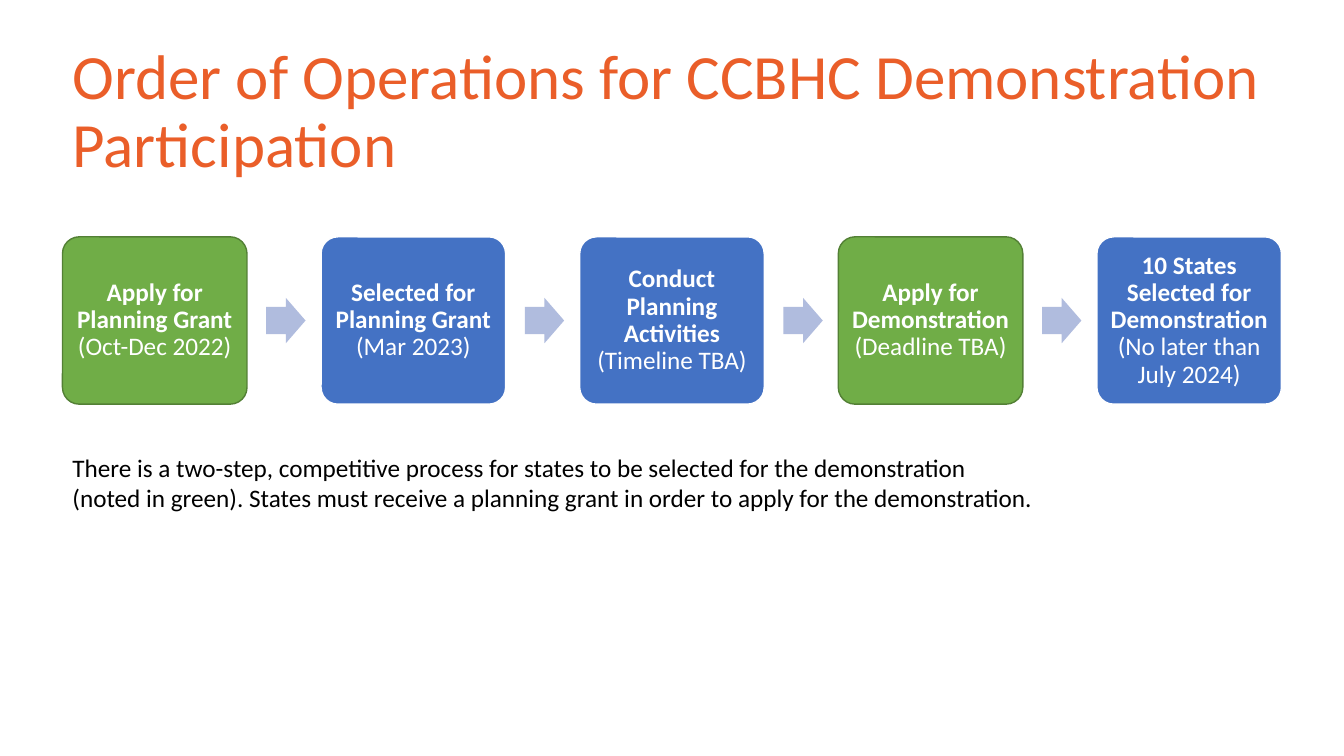
from pptx import Presentation
from pptx.dml.color import RGBColor
from pptx.enum.shapes import MSO_SHAPE as Shape
from pptx.enum.text import MSO_ANCHOR as Anchor, MSO_AUTO_SIZE as AutoSize, PP_ALIGN as Align
from pptx.util import Inches, Pt

GREEN, DARK_GREEN = "70AD47", "538035"
BLUE, PALE_BLUE = "4472C4", "B0BCDE"
ORANGE, WHITE, BLACK = "EA5E29", "FFFFFF", "000000"

STEPS = [
    ("Apply for Planning Grant", "(Oct-Dec 2022)", True),
    ("Selected for Planning Grant", "(Mar 2023)", False),
    ("Conduct Planning Activities", "(Timeline TBA)", False),
    ("Apply for Demonstration", "(Deadline TBA)", True),
    ("10 States Selected for Demonstration", "(No later than July 2024)", False),
]


def color(value):
    """Turn a hex string into a colour."""
    return RGBColor.from_string(value)


def style(para, size, ink):
    """Set the font of a whole paragraph."""
    para.font.name = "Calibri"
    para.font.size = Pt(size)
    para.font.color.rgb = color(ink)


def add_title(page, left, top, width, height):
    """Fill and place the title placeholder."""
    title = page.shapes.title
    title.left, title.top = Inches(left), Inches(top)
    title.width, title.height = Inches(width), Inches(height)
    frame = title.text_frame
    frame.text = "Order of Operations for CCBHC Demonstration Participation"
    frame.auto_size = AutoSize.NONE
    frame.vertical_anchor = Anchor.MIDDLE
    para = frame.paragraphs[0]
    para.alignment = Align.LEFT
    para.line_spacing = 0.9
    style(para, 45, ORANGE)


def add_solid(page, preset, adjustments, fill, left, top, width, height):
    """Add a flat preset shape without an outline."""
    solid = page.shapes.add_shape(
        preset, Inches(left), Inches(top), Inches(width), Inches(height))
    solid.shadow.inherit = False
    for index, value in enumerate(adjustments):
        solid.adjustments[index] = value
    solid.fill.solid()
    solid.fill.fore_color.rgb = color(fill)
    solid.line.fill.background()
    return solid


def add_step(page, step, left, top, width, height):
    """Add one step box with its bold name and its date."""
    name, date, competitive = step
    box = add_solid(page, Shape.ROUNDED_RECTANGLE, [0.1],
                    GREEN if competitive else BLUE, left, top, width, height)
    box.line.color.rgb = color(DARK_GREEN if competitive else WHITE)
    box.line.width = Pt(1)
    frame = box.text_frame
    frame.word_wrap = True
    frame.vertical_anchor = Anchor.MIDDLE
    frame.margin_left = frame.margin_right = Inches(0.07)
    frame.margin_top = frame.margin_bottom = Inches(0.07)
    para = frame.paragraphs[0]
    para.alignment = Align.CENTER
    para.line_spacing = 0.9
    style(para, 18, WHITE)
    span = para.add_run()
    span.text = name
    span.font.bold = True
    para.add_line_break()
    para.add_run().text = date


def add_process(page, left, top, width, height):
    """Spread the steps over the width, with an arrow in each gap."""
    step_width, arrow_width, arrow_height = 1.83, 0.39, 0.45
    pitch = (width - step_width) / (len(STEPS) - 1)
    for index, step in enumerate(STEPS):
        step_left = left + index * pitch
        add_step(page, step, step_left, top, step_width, height)
        if index < len(STEPS) - 1:
            add_solid(page, Shape.RIGHT_ARROW, [0.6, 0.5], PALE_BLUE,
                      step_left + 2.02, top + (height - arrow_height) / 2,
                      arrow_width, arrow_height)


def add_note(page, left, top, width, height):
    """Add the explanation below the process."""
    box = page.shapes.add_textbox(
        Inches(left), Inches(top), Inches(width), Inches(height))
    frame = box.text_frame
    frame.word_wrap = True
    frame.auto_size = AutoSize.SHAPE_TO_FIT_TEXT
    para = frame.paragraphs[0]
    para.text = (
        "There is a two-step, competitive process for states to be selected for "
        "the demonstration (noted in green). States must receive a planning grant "
        "in order to apply for the demonstration.")
    style(para, 18, BLACK)


def main():
    """Build the slide and save the deck."""
    deck = Presentation()
    deck.slide_width, deck.slide_height = Inches(13.33), Inches(7.5)
    page = deck.slides.add_slide(deck.slide_layouts.get_by_name("Title Only"))
    add_title(page, 0.62, 0.4, 12.1, 1.45)
    add_process(page, 0.62, 2.35, 12.09, 1.66)
    add_note(page, 0.62, 4.44, 9.75, 0.71)
    deck.save("out.pptx")


if __name__ == "__main__":
    main()
